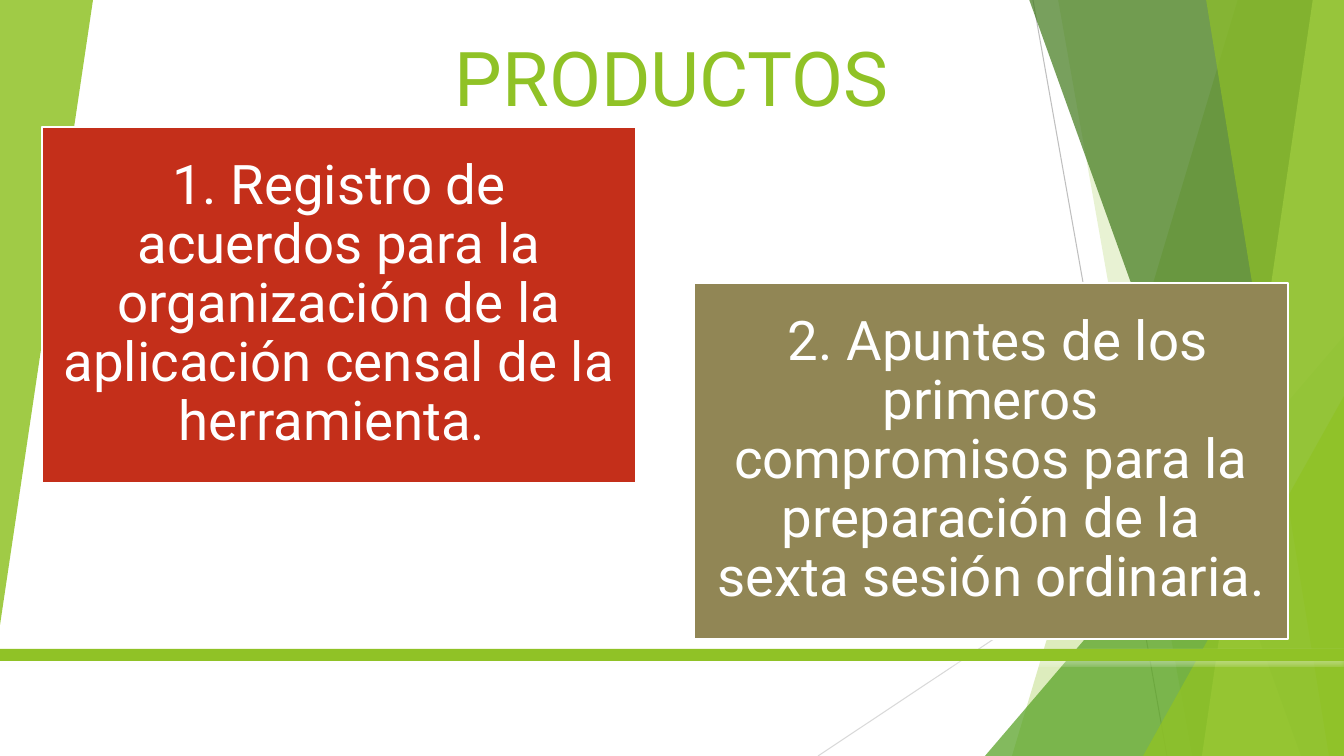
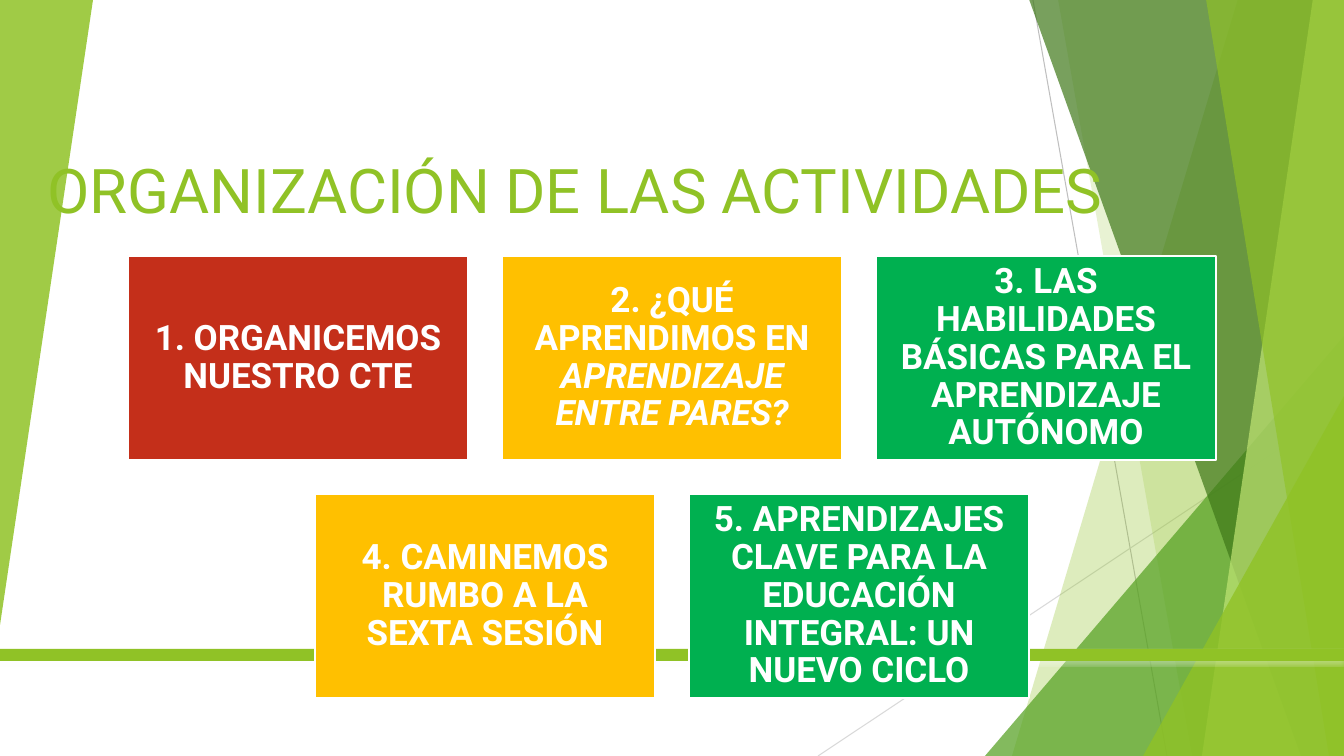
import pptx
import pptx.util
import pptx.dml.color
import pptx.enum.shapes
import pptx.enum.text
import pptx.oxml.ns
import lxml.etree

PX = 914400 / 100.8
WIDTH, HEIGHT = 1344, 756

THEME = {
    "font": "Roboto",
    "colours": {
        "lime": "90C226", "leaf": "54A021", "forest": "3F7819", "pale": "C0E474",
        "grey": "BFBFBF", "mist": "D9D9D9", "white": "FFFFFF",
        "red": "C42F1A", "olive": "918655", "amber": "FFC000", "green": "00B050",
    },
    "facet_line": 0.75,
    "card_line": 1.5,
    "line_spacing": 0.9,
}

RAYS = [
    ((1033, 0), (1167, HEIGHT), "grey"),
    ((WIDTH, 406), (818, HEIGHT), "mist"),
]
FACETS = [
    ("blade", (1238, 1012), "lime", 30),
    ("blade", (1058, 1192), "lime", 20),
    ("triangle", (985, 336, 359, 420, 0), "leaf", 72),
    ("blade", (1029, 1301), "forest", 70),
    ("blade", (1313, 1202), "pale", 70),
    ("blade", (1206, 1329), "lime", 65),
    ("triangle", (1143, 396, 201, 360, 0), "lime", 80),
    ("triangle", (0, 0, 93, 625, 180), "lime", 85),
]
BAND = (0, 649, WIDTH, 12)
BAND_SHADOW = {"blurRad": "25400", "dist": "25400", "dir": "5400000", "algn": "ctr", "rotWithShape": "0"}

PRODUCTS = {
    "title": ("PRODUCTOS", (28, 0, 1288, 127), 54),
    "card": {"size": (594, 356), "inset": 16, "points": 39, "bold": False},
    "cards": [
        ("red", [("1. Registro de acuerdos para la organización de la aplicación censal de la herramienta. ", False)]),
        ("olive", [(" 2. Apuntes de los primeros compromisos para la preparación de la sexta sesión ordinaria.", False)]),
    ],
    "start": (42, 127),
    "step": (652, 156),
}
ACTIVITIES = {
    "title": ("ORGANIZACIÓN DE LAS ACTIVIDADES", (28, 19, 1095, 212), 44),
    "card": {"size": (340, 204), "inset": 10, "points": 25, "bold": True},
    "rows": [
        [
            ("red", [("1. ORGANICEMOS NUESTRO CTE", False)]),
            ("amber", [("2. ¿QUÉ APRENDIMOS EN ", False), ("APRENDIZAJE ENTRE PARES?", True)]),
            ("green", [("3. LAS HABILIDADES BÁSICAS PARA EL APRENDIZAJE AUTÓNOMO", False)]),
        ],
        [
            ("amber", [("4. CAMINEMOS RUMBO A LA SEXTA SESIÓN", False)]),
            ("green", [("5. APRENDIZAJES CLAVE PARA LA EDUCACIÓN INTEGRAL: UN NUEVO CICLO", False)]),
        ],
    ],
    "top": 256,
    "gap": 34,
}


def emu(*lengths):
    return [pptx.util.Emu(round(length * PX)) for length in lengths]


def colour(name):
    return pptx.dml.color.RGBColor.from_string(THEME["colours"][name])


def set_format(target, values):
    for name, value in values.items():
        setattr(target, name, value)


def add_xml(parent, tag, **attributes):
    return lxml.etree.SubElement(parent, pptx.oxml.ns.qn(tag), attributes)


def paint(shape, name, alpha=100):
    shape.shadow.inherit = False
    shape.fill.solid()
    shape.fill.fore_color.rgb = colour(name)
    shape.line.fill.background()
    if alpha < 100:
        tint = shape.fill._xPr.find(".//" + pptx.oxml.ns.qn("a:srgbClr"))
        add_xml(tint, "a:alpha", val=str(alpha * 1000))


def add_ray(slide, start, end, name):
    ray = slide.shapes.add_connector(pptx.enum.shapes.MSO_CONNECTOR.STRAIGHT, *emu(*start, *end))
    ray.line.color.rgb = colour(name)
    ray.line.width = pptx.util.Pt(THEME["facet_line"])
    add_xml(ray._element.spPr, "a:effectLst")


def add_blade(slide, top_x, bottom_x):
    outline = slide.shapes.build_freeform(top_x, -1, scale=PX)
    outline.add_line_segments([(WIDTH, -1), (WIDTH, HEIGHT), (bottom_x, HEIGHT)], close=True)
    return outline.convert_to_shape()


def add_triangle(slide, left, top, width, height, rotation):
    triangle = slide.shapes.add_shape(
        pptx.enum.shapes.MSO_SHAPE.ISOSCELES_TRIANGLE, *emu(left, top, width, height))
    triangle.adjustments[0] = 1
    triangle.rotation = rotation
    return triangle


def add_backdrop(slide):
    for ray in RAYS:
        add_ray(slide, *ray)
    makers = {"blade": add_blade, "triangle": add_triangle}
    for kind, geometry, name, alpha in FACETS:
        paint(makers[kind](slide, *geometry), name, alpha)
    band = slide.shapes.add_shape(pptx.enum.shapes.MSO_SHAPE.RECTANGLE, *emu(*BAND))
    paint(band, "lime")
    effects = band._element.spPr.find(pptx.oxml.ns.qn("a:effectLst"))
    glow = add_xml(add_xml(effects, "a:outerShdw", **BAND_SHADOW), "a:srgbClr", val=THEME["colours"]["white"])
    add_xml(glow, "a:alpha", val="40000")


def write(frame, runs, points, name, bold=False):
    paragraph = frame.paragraphs[0]
    paragraph.alignment = pptx.enum.text.PP_ALIGN.CENTER
    for text, italic in runs:
        run = paragraph.add_run()
        run.text = text
        set_format(run.font, {"name": THEME["font"], "size": pptx.util.Pt(points), "bold": bold, "italic": italic})
        run.font.color.rgb = colour(name)
    return paragraph


def add_title(slide, text, place, points):
    title = slide.shapes.add_textbox(*emu(*place))
    set_format(title.text_frame, {
        "word_wrap": True, "vertical_anchor": pptx.enum.text.MSO_ANCHOR.BOTTOM})
    write(title.text_frame, [(text, False)], points, "lime")


def add_card(slide, left, top, style, name, runs):
    card = slide.shapes.add_shape(
        pptx.enum.shapes.MSO_SHAPE.RECTANGLE, *emu(left, top, *style["size"]))
    paint(card, name)
    card.line.color.rgb = colour("white")
    card.line.width = pptx.util.Pt(THEME["card_line"])
    inset = emu(style["inset"])[0]
    set_format(card.text_frame, {
        "word_wrap": True, "vertical_anchor": pptx.enum.text.MSO_ANCHOR.MIDDLE,
        "margin_left": inset, "margin_top": inset, "margin_right": inset, "margin_bottom": inset})
    paragraph = write(card.text_frame, runs, style["points"], "white", style["bold"])
    paragraph.line_spacing = THEME["line_spacing"]


def stair_places(content):
    (left, top), (across, down) = content["start"], content["step"]
    for index, card in enumerate(content["cards"]):
        yield left + index * across, top + index * down, card


def centred_places(content):
    width, height = content["card"]["size"]
    gap = content["gap"]
    for row_index, row in enumerate(content["rows"]):
        left = (WIDTH - len(row) * (width + gap) + gap) / 2
        for index, card in enumerate(row):
            yield left + index * (width + gap), content["top"] + row_index * (height + gap), card


def main():
    deck = pptx.Presentation()
    deck.slide_width, deck.slide_height = emu(WIDTH, HEIGHT)
    for content, places in ((PRODUCTS, stair_places), (ACTIVITIES, centred_places)):
        slide = deck.slides.add_slide(deck.slide_layouts[6])
        add_backdrop(slide)
        add_title(slide, *content["title"])
        for left, top, card in places(content):
            add_card(slide, left, top, content["card"], *card)
    deck.save("out.pptx")


if __name__ == "__main__":
    main()
